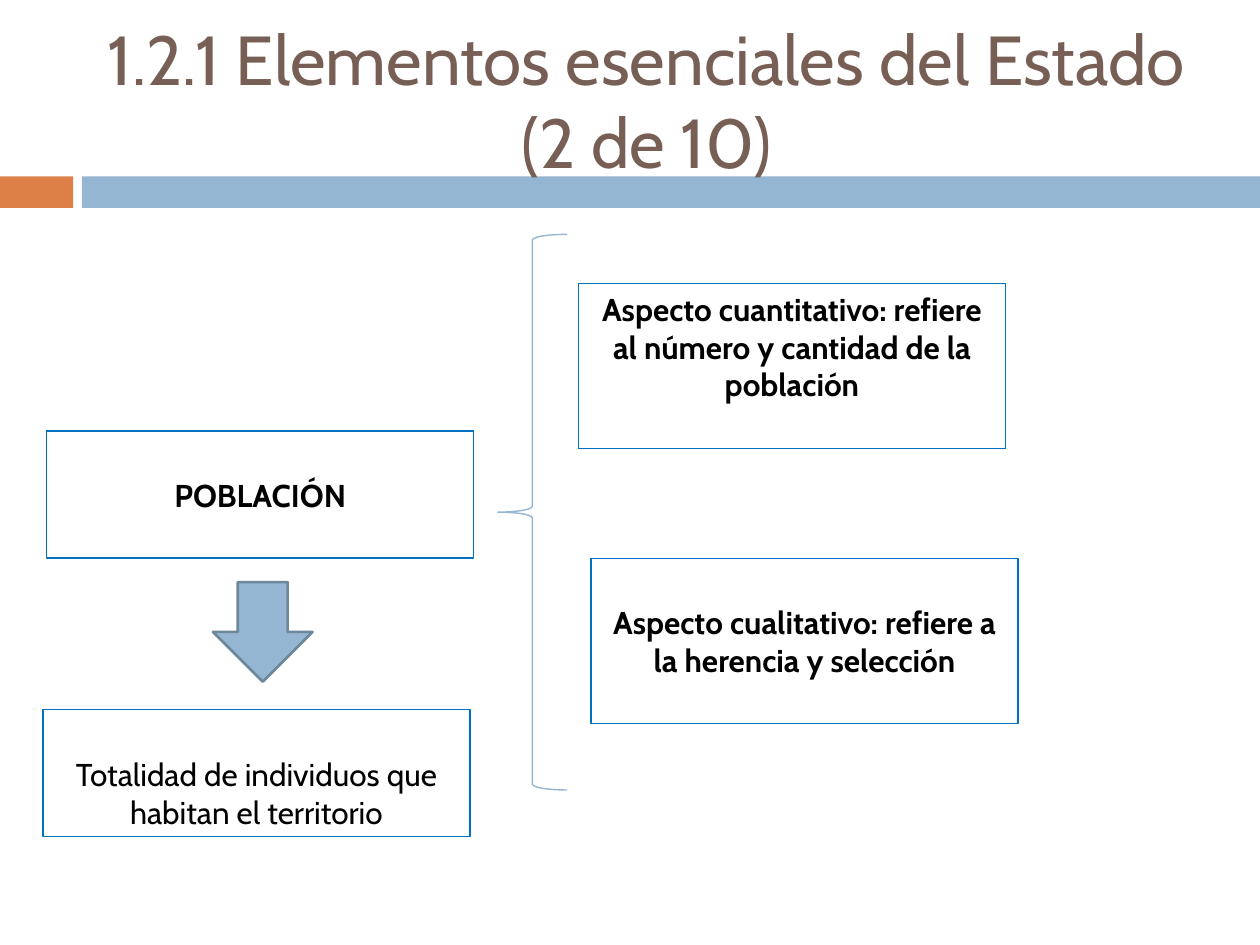
import pptx
import pptx.dml.color
import pptx.enum.shapes
import pptx.enum.text
import pptx.util

RGBColor = pptx.dml.color.RGBColor
ORANGE = RGBColor(0xDD, 0x80, 0x47)
BLUE = RGBColor(0x94, 0xB6, 0xD2)
SLATE = RGBColor(0x6D, 0x87, 0x9B)
BORDER = RGBColor(0x00, 0x70, 0xC0)
BROWN = RGBColor(0x77, 0x5F, 0x55)
BLACK = RGBColor(0x00, 0x00, 0x00)
KIND = pptx.enum.shapes.MSO_SHAPE
ANCHOR = pptx.enum.text.MSO_ANCHOR

deck = pptx.Presentation()
deck.slide_width = pptx.util.Inches(10)
deck.slide_height = pptx.util.Inches(7.5)
CELL = deck.slide_width / 100
slide = deck.slides.add_slide(deck.slide_layouts[5])


def draw(kind, left, top, width, height, fill=None, line=None, weight=0.75):
    shape = slide.shapes.add_shape(
        kind, *(round(cells * CELL) for cells in (left, top, width, height)))
    shape.shadow.inherit = False
    if fill is None:
        shape.fill.background()
    else:
        shape.fill.solid()
        shape.fill.fore_color.rgb = fill
    if line is None:
        shape.line.fill.background()
    else:
        shape.line.color.rgb = line
        shape.line.width = pptx.util.Pt(weight)
    return shape


def write(shape, text, size=18, color=BLACK, bold=False, anchor=ANCHOR.MIDDLE):
    frame = shape.text_frame
    frame.text = text
    frame.word_wrap = True
    frame.auto_size = pptx.enum.text.MSO_AUTO_SIZE.NONE
    frame.vertical_anchor = anchor
    paragraph = frame.paragraphs[0]
    paragraph.alignment = pptx.enum.text.PP_ALIGN.CENTER
    font = paragraph.runs[0].font
    font.name = "Cabin"
    font.size = pptx.util.Pt(size)
    font.bold = bold
    font.color.rgb = color


heading = slide.shapes.title
heading.left, heading.top, heading.width, heading.height = (
    round(cells * CELL) for cells in (6.7, 2.5, 89.2, 10.8))
write(heading, "1.2.1 Elementos esenciales del Estado (2 de 10)", size=39.6, color=BROWN)

for left, width, color in ((0, 5.8, ORANGE), (6.5, 93.5, BLUE)):
    band = draw(KIND.RECTANGLE, left, 14, width, 2.5, fill=color)
    heading.element.addprevious(band.element)

draw(KIND.LEFT_BRACE, 39.5, 18.6, 5.5, 44.1, line=BLUE, weight=0.79)
draw(KIND.DOWN_ARROW, 16.9, 46.2, 7.9, 7.9, fill=BLUE, line=SLATE, weight=1.5)

concepts = (
    (3.7, 34.2, 10.1, "POBLACIÓN", True, ANCHOR.MIDDLE),
    (45.9, 22.5, 13.1, "Aspecto cuantitativo: refiere al número y cantidad de la población",
     True, ANCHOR.TOP),
    (46.9, 44.3, 13.1, "Aspecto cualitativo: refiere a la herencia y selección",
     True, ANCHOR.MIDDLE),
    (3.4, 56.3, 10.1, "Totalidad de individuos que habitan el territorio",
     False, ANCHOR.BOTTOM),
)
for left, top, height, text, bold, anchor in concepts:
    concept = draw(KIND.RECTANGLE, left, top, 33.9, height, line=BORDER)
    write(concept, text, bold=bold, anchor=anchor)

deck.save("out.pptx")
